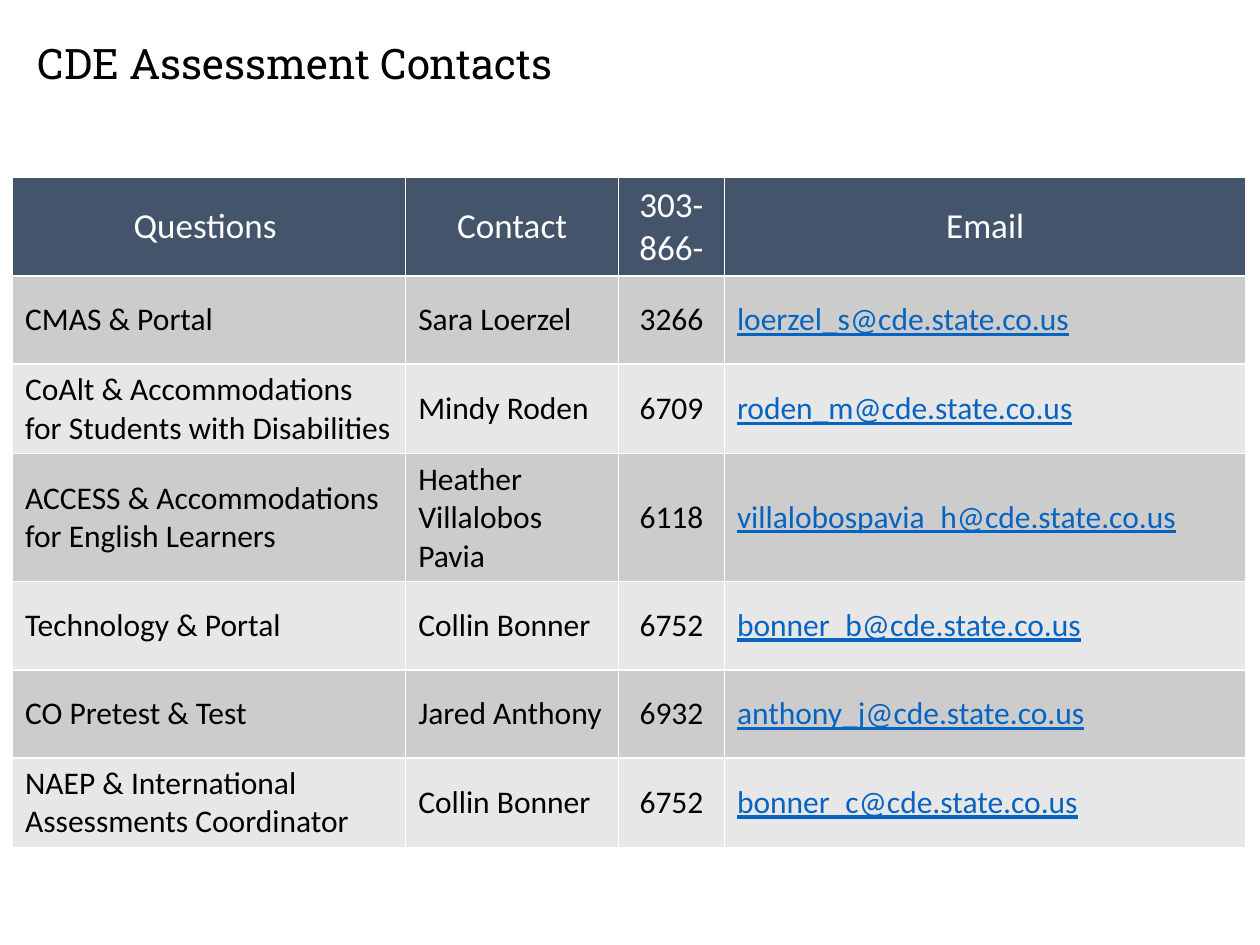
from lxml import etree
from pptx import Presentation
from pptx.dml.color import RGBColor
from pptx.enum.text import MSO_ANCHOR, PP_ALIGN
from pptx.oxml.ns import qn
from pptx.util import Inches, Pt

TOP, MIDDLE = MSO_ANCHOR.TOP, MSO_ANCHOR.MIDDLE
LEFT, CENTER = PP_ALIGN.LEFT, PP_ALIGN.CENTER

TITLE = "CDE Assessment Contacts"
HEADS = ["Questions ", "Contact", "303-866-", "Email"]
ROWS = [
    ("CMAS & Portal", "Sara Loerzel", "3266", "loerzel_s@cde.state.co.us"),
    ("CoAlt & Accommodations for Students with Disabilities",
     "Mindy Roden", "6709", "roden_m@cde.state.co.us"),
    ("ACCESS & Accommodations for English Learners",
     "Heather Villalobos Pavia", "6118", "villalobospavia_h@cde.state.co.us"),
    ("Technology & Portal", "Collin Bonner", "6752", "bonner_b@cde.state.co.us"),
    ("CO Pretest & Test", "Jared Anthony", "6932", "anthony_j@cde.state.co.us"),
    ("NAEP & International Assessments Coordinator",
     "Collin Bonner", "6752", "bonner_c@cde.state.co.us"),
]
WIDTHS = [3.12, 1.69, 0.84, 4.14]
HEIGHT = 0.7
PHONE, EMAIL = 2, 3
COLORS = {"head": "44546A", "odd": "CCCCCC", "even": "E7E7E7",
          "white": "FFFFFF", "black": "000000", "link": "0563C1"}


def rgb(name):
    return RGBColor.from_string(COLORS[name])


def add_text(frame, text, font, size, color, align):
    para = frame.paragraphs[0]
    para.alignment = align
    run = para.add_run()
    run.text = text
    run.font.name = font
    run.font.size = Pt(size)
    run.font.bold = False
    run.font.color.rgb = rgb(color)
    return run


def add_lines(cell):
    props = cell._tc.get_or_add_tcPr()
    for spot, side in enumerate(("lnL", "lnR", "lnT", "lnB")):
        line = etree.Element(qn("a:" + side), w=str(Pt(1)))
        fill = etree.SubElement(line, qn("a:solidFill"))
        etree.SubElement(fill, qn("a:srgbClr"), val=COLORS["white"])
        props.insert(spot, line)


def add_title(slide):
    title = slide.shapes.title
    title.left, title.top = Inches(0.3), Inches(0.3)
    title.width, title.height = Inches(8.62), Inches(0.78)
    frame = title.text_frame
    frame.margin_left = frame.margin_right = 0
    frame.margin_top = frame.margin_bottom = 0
    frame.vertical_anchor = TOP
    frame.word_wrap = True
    add_text(frame, TITLE, "Roboto Slab", 24, "black", LEFT)


def add_contacts(slide):
    data = [HEADS] + ROWS
    table = slide.shapes.add_table(
        len(data), len(HEADS), Inches(0.1), Inches(1.41),
        Inches(sum(WIDTHS)), Inches(HEIGHT * len(data))).table
    for col, width in zip(table.columns, WIDTHS):
        col.width = Inches(width)
    for r, row in enumerate(data):
        table.rows[r].height = Inches(HEIGHT)
        head = r == 0
        shade = "head" if head else "odd" if r % 2 else "even"
        for c, text in enumerate(row):
            cell = table.cell(r, c)
            cell.vertical_anchor = MIDDLE
            cell.fill.solid()
            cell.fill.fore_color.rgb = rgb(shade)
            add_lines(cell)
            link = c == EMAIL and not head
            color = "white" if head else "link" if link else "black"
            align = CENTER if head or c == PHONE else LEFT
            run = add_text(cell.text_frame, text, "Calibri",
                           20 if head else 18, color, align)
            if link:
                run.font.underline = True


def main():
    deck = Presentation()
    deck.slide_width, deck.slide_height = Inches(10), Inches(7.5)
    slide = deck.slides.add_slide(deck.slide_layouts[5])
    add_title(slide)
    add_contacts(slide)
    deck.save("out.pptx")


if __name__ == "__main__":
    main()
